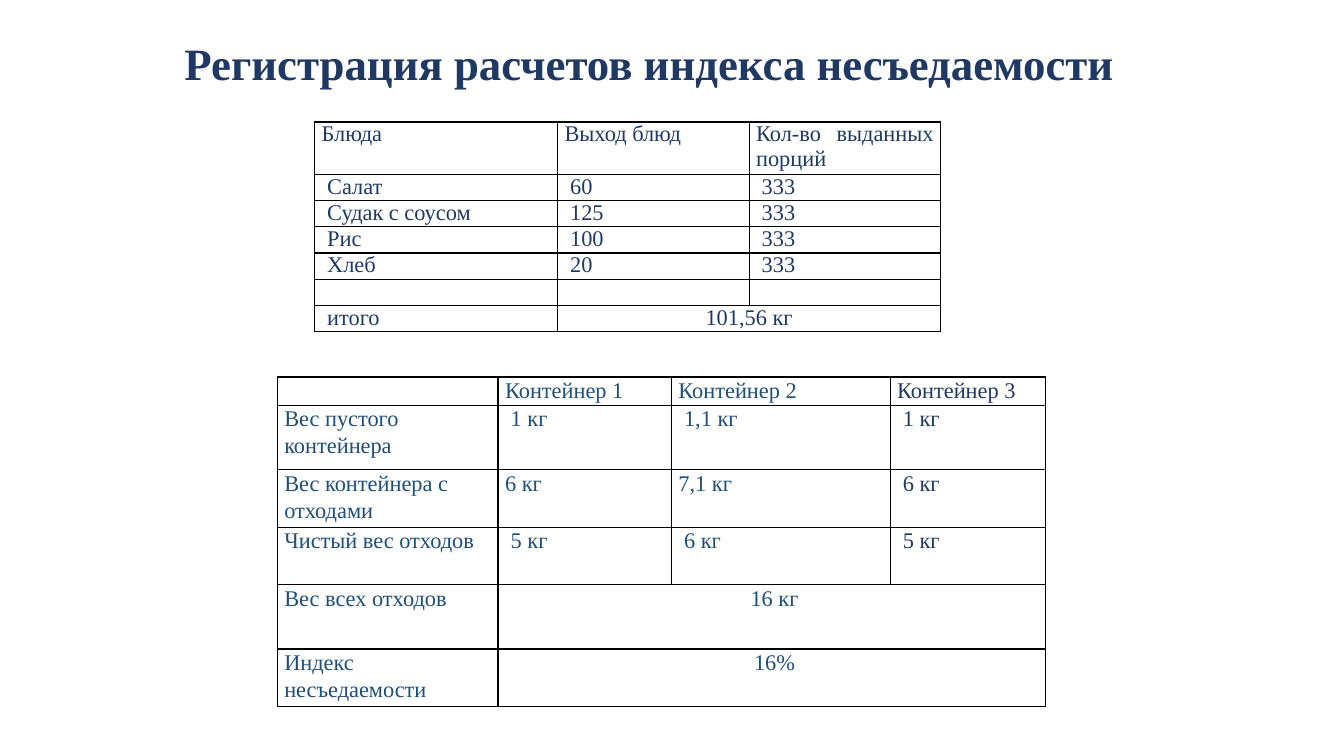
from lxml import etree
from pptx import Presentation
from pptx import util as u
from pptx.dml import color
from pptx.enum import text
from pptx.oxml import ns

FONT = "Times New Roman"
NAVY = "203864"
BLUE = "1F4E79"
BLACK = "000000"

DISHES = [
    ["Блюда", "Выход блюд", "Кол-во выданных порций"],
    [" Салат", " 60", " 333"],
    [" Судак с соусом", " 125", " 333"],
    [" Рис", " 100", " 333"],
    [" Хлеб", " 20", " 333"],
    ["", "", ""],
    [" итого", "101,56 кг"],
]
CONTAINERS = [
    ["", "Контейнер 1", "Контейнер 2", "Контейнер 3"],
    ["Вес пустого контейнера", " 1 кг", " 1,1 кг", " 1 кг"],
    ["Вес контейнера с отходами", "6 кг", "7,1 кг", " 6 кг"],
    ["Чистый вес отходов", " 5 кг", " 6 кг", " 5 кг"],
    ["Вес всех отходов", " 16 кг"],
    ["Индекс несъедаемости", " 16%"],
]


def rgb(value):
    return color.RGBColor.from_string(value)


def set_font(paragraph, size, colour, bold=False):
    font = paragraph.font
    font.name, font.size, font.bold = FONT, u.Pt(size), bold
    font.color.rgb = rgb(colour)


def add_borders(cell):
    properties = cell._tc.get_or_add_tcPr()
    for position, side in enumerate(("lnL", "lnR", "lnT", "lnB")):
        line = etree.Element(ns.qn(f"a:{side}"), w=str(u.Pt(1)))
        fill = etree.SubElement(line, ns.qn("a:solidFill"))
        etree.SubElement(fill, ns.qn("a:srgbClr"), val=BLACK)
        properties.insert(position, line)


def format_cell(cell, content, colour, align, line_spacing, space_after):
    cell.fill.background()
    add_borders(cell)
    cell.margin_left = cell.margin_right = u.Inches(0.07)
    cell.margin_top = cell.margin_bottom = 0
    cell.text = content
    paragraph = cell.text_frame.paragraphs[0]
    paragraph.alignment = align
    paragraph.line_spacing = line_spacing
    paragraph.space_after = u.Pt(space_after)
    set_font(paragraph, 16, colour)


def add_grid(slide, left, top, widths, heights, rows, colours, align,
             line_spacing=1.0, space_after=0):
    """Add a bordered table; a row with too few texts spans its last one to the right edge."""
    table = slide.shapes.add_table(
        len(heights), len(widths), u.Inches(left), u.Inches(top),
        u.Inches(sum(widths)), u.Inches(sum(heights))).table
    table.first_row = table.horz_banding = False
    for column, width in zip(table.columns, widths):
        column.width = u.Inches(width)
    for row, height in zip(table.rows, heights):
        row.height = u.Inches(height)

    last = len(widths) - 1
    for r, texts in enumerate(rows):
        spans = len(texts) <= last
        if spans:
            table.cell(r, len(texts) - 1).merge(table.cell(r, last))
        for c, colour in enumerate(colours):
            content = texts[c] if c < len(texts) else ""
            centred = spans and c > 0
            format_cell(table.cell(r, c), content, colour,
                        text.PP_ALIGN.CENTER if centred else align,
                        line_spacing, space_after)


def add_title(slide, content):
    box = slide.shapes.add_textbox(
        u.Inches(1.73), u.Inches(0.27), u.Inches(9.82), u.Inches(0.94))
    frame = box.text_frame
    frame.word_wrap = True
    frame.margin_top = u.Inches(0.08)
    frame.text = content
    set_font(frame.paragraphs[0], 32, NAVY, bold=True)


def main():
    presentation = Presentation()
    presentation.slide_width = u.Inches(13.33)
    presentation.slide_height = u.Inches(7.5)
    slide = presentation.slides.add_slide(presentation.slide_layouts[6])

    add_grid(slide, 3.12, 1.21, [2.41, 1.9, 1.9], [0.52] + [0.26] * 6,
             DISHES, [NAVY] * 3, text.PP_ALIGN.JUSTIFY)
    add_grid(slide, 2.75, 3.74, [2.19, 1.72, 2.17, 1.54],
             [0.28, 0.64, 0.57, 0.57, 0.64, 0.57],
             CONTAINERS, [BLUE] * 3 + [NAVY], text.PP_ALIGN.LEFT,
             line_spacing=1.07, space_after=8)
    add_title(slide, "Регистрация расчетов индекса несъедаемости")
    presentation.save("out.pptx")


if __name__ == "__main__":
    main()
